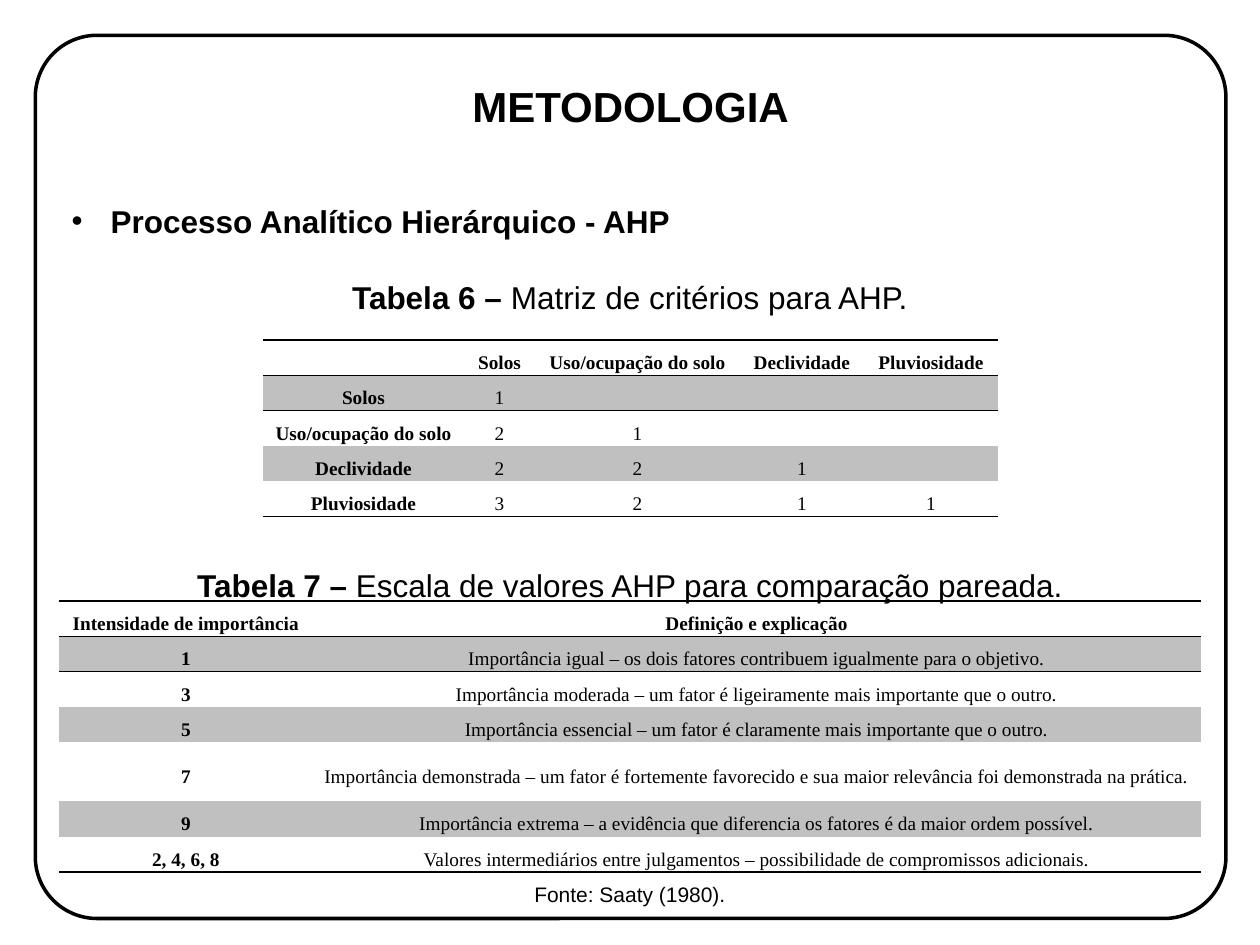
from lxml.etree import SubElement
from pptx import Presentation
from pptx.dml.color import RGBColor
from pptx.enum.shapes import MSO_SHAPE
from pptx.enum.text import MSO_ANCHOR, PP_ALIGN
from pptx.oxml.ns import qn
from pptx.util import Inches, Pt

COLORS = {"ink": "000000", "band": "C0C0C0"}
PLAIN = "{2D5ABB26-0587-4C30-8999-92F81FD0307C}"
TITLE = "METODOLOGIA"
LINES = [
    ("Processo Analítico Hierárquico - AHP", "", 18, 0),
    ("Tabela 6 –", " Matriz de critérios para AHP.", 18, 22),
    ("Tabela 7 –", " Escala de valores AHP para comparação pareada.", 18, 143),
    ("", "Fonte: Saaty (1980).", 12, 159),
]
MATRIX = [
    ("", "Solos", "Uso/ocupação do solo", "Declividade", "Pluviosidade"),
    ("Solos", "1", "", "", ""),
    ("Uso/ocupação do solo", "2", "1", "", ""),
    ("Declividade", "2", "2", "1", ""),
    ("Pluviosidade", "3", "2", "1", "1"),
]
SCALE = [
    ("Intensidade de importância", "Definição e explicação"),
    ("1", "Importância igual – os dois fatores contribuem igualmente para o objetivo."),
    ("3", "Importância moderada – um fator é ligeiramente mais importante que o outro."),
    ("5", "Importância essencial – um fator é claramente mais importante que o outro."),
    ("7", "Importância demonstrada – um fator é fortemente favorecido e sua maior relevância foi demonstrada na prática."),
    ("9", "Importância extrema – a evidência que diferencia os fatores é da maior ordem possível."),
    ("2, 4, 6, 8", "Valores intermediários entre julgamentos – possibilidade de compromissos adicionais."),
]
TABLES = [
    (MATRIX, 2.09, 2.7, [1.59, 0.57, 1.62, 0.99, 1.06], [0.28] * 5),
    (SCALE, 0.47, 4.77, [2.01, 7.05], [0.28] * 4 + [0.47] + [0.28] * 2),
]


def color(name):
    return RGBColor.from_string(COLORS[name])


def style(run, size, bold, face="Arial"):
    font = run.font
    font.size, font.bold, font.name = Pt(size), bold, face
    font.color.rgb = color("ink")


def add_rule(cell, side):
    props = cell._tc.get_or_add_tcPr()
    line = SubElement(props, qn("a:" + side), w=str(Pt(1)))
    fill = SubElement(line, qn("a:solidFill"))
    SubElement(fill, qn("a:srgbClr"), val=COLORS["ink"])


def fill_cell(cell, text, row, col, last):
    cell.margin_left = cell.margin_right = Inches(0.07)
    cell.margin_top = cell.margin_bottom = 0
    cell.vertical_anchor = MSO_ANCHOR.MIDDLE
    if row in (0, 1):
        add_rule(cell, "lnT")
    if row in (0, last):
        add_rule(cell, "lnB")
    if row % 2:
        cell.fill.solid()
        cell.fill.fore_color.rgb = color("band")
    else:
        cell.fill.background()
    para = cell.text_frame.paragraphs[0]
    para.text = text
    para.alignment = PP_ALIGN.CENTER
    if text:
        para.line_spacing = 1.5
        style(para.runs[0], 11, row == 0 or col == 0, "Times New Roman")
    else:
        SubElement(para._p, qn("a:endParaRPr"), sz="1100")


def add_grid(slide, data, left, top, wides, highs):
    frame = slide.shapes.add_table(
        len(data), len(wides), Inches(left), Inches(top),
        Inches(sum(wides)), Inches(sum(highs)))
    table = frame.table
    table.first_row = table.horz_banding = False
    table._tbl.tblPr.find(qn("a:tableStyleId")).text = PLAIN
    for col, wide in enumerate(wides):
        table.columns[col].width = Inches(wide)
    for row, texts in enumerate(data):
        table.rows[row].height = Inches(highs[row])
        for col, text in enumerate(texts):
            fill_cell(table.cell(row, col), text, row, col, len(data) - 1)


def add_body(slide):
    box = slide.shapes.add_textbox(
        Inches(0.47), Inches(1.55), Inches(9.06), Inches(5.89))
    frame = box.text_frame
    frame.word_wrap = True
    for num, (lead, rest, size, gap) in enumerate(LINES):
        para = frame.add_paragraph() if num else frame.paragraphs[0]
        para.alignment = PP_ALIGN.CENTER if num else PP_ALIGN.JUSTIFY
        para.space_before = Pt(gap)
        for text, bold in ((lead, True), (rest, False)):
            if text:
                run = para.add_run()
                run.text = text
                style(run, size, bold)
    props = frame.paragraphs[0]._p.get_or_add_pPr()
    props.set("marL", str(Inches(0.31)))
    props.set("indent", str(Inches(-0.31)))
    SubElement(props, qn("a:buFont"), typeface="Arial")
    SubElement(props, qn("a:buChar"), char="•")


def main():
    deck = Presentation()
    deck.slide_width, deck.slide_height = Inches(10), Inches(7.5)
    slide = deck.slides.add_slide(deck.slide_layouts[5])
    border = slide.shapes.add_shape(
        MSO_SHAPE.ROUNDED_RECTANGLE,
        Inches(0.28), Inches(0.28), Inches(9.45), Inches(7.01))
    border.adjustments[0] = 0.07
    border.shadow.inherit = False
    border.fill.background()
    border.line.color.rgb = color("ink")
    border.line.width = Pt(2)

    title = slide.shapes.title
    title.left, title.top = Inches(0.28), Inches(0.29)
    title.width, title.height = Inches(9.45), Inches(1.1)
    title.text_frame.text = TITLE
    title.text_frame.vertical_anchor = MSO_ANCHOR.MIDDLE
    para = title.text_frame.paragraphs[0]
    para.alignment = PP_ALIGN.CENTER
    style(para.runs[0], 24, True)

    add_body(slide)
    for grid in TABLES:
        add_grid(slide, *grid)
    deck.save("out.pptx")


if __name__ == "__main__":
    main()
